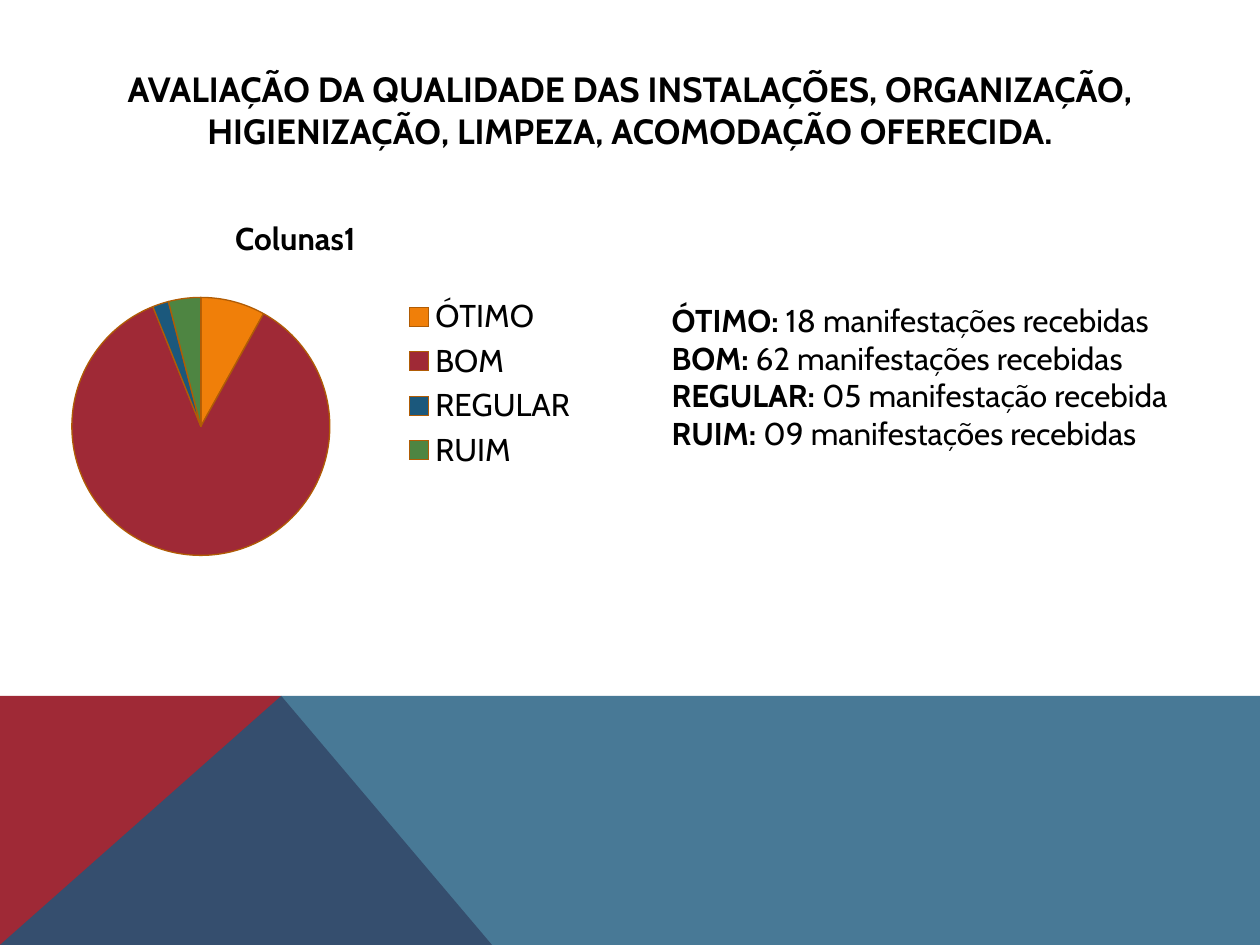
import dataclasses

import lxml.etree
import pptx
import pptx.chart.data
import pptx.dml.color
import pptx.enum.chart
import pptx.enum.text
import pptx.oxml
import pptx.oxml.ns
import pptx.util

Cm = pptx.util.Cm
qn = pptx.oxml.ns.qn


@dataclasses.dataclass(frozen=True)
class Theme:
    font: str = "Cabin"
    text: str = "000000"
    red: str = "9F2936"
    blue: str = "1B587C"
    slices: tuple = ("F07F09", "9F2936", "1B587C", "4E8542")
    slice_edge: str = "B05C05"
    heading_size: int = 20
    body_size: int = 18


def rgb(value):
    return pptx.dml.color.RGBColor.from_string(value)


class SlideBuilder:
    def __init__(self, page, theme):
        self.page = page
        self.theme = theme

    def style_font(self, font, size, bold=False):
        font.name = self.theme.font
        font.size = pptx.util.Pt(size)
        font.bold = bold
        font.color.rgb = rgb(self.theme.text)

    def polygon(self, points, color, opacity=100):
        start, *rest = [(Cm(x), Cm(y)) for x, y in points]
        builder = self.page.shapes.build_freeform(*start)
        builder.add_line_segments(rest, close=True)
        shape = builder.convert_to_shape()
        shape.shadow.inherit = False
        shape.line.fill.background()
        shape.fill.solid()
        shape.fill.fore_color.rgb = rgb(color)
        if opacity < 100:
            color_node = shape.fill._xPr.find(qn("a:solidFill"))[0]
            alpha = lxml.etree.SubElement(color_node, qn("a:alpha"))
            alpha.set("val", str(opacity * 1000))

    def text_box(self, area, lines, size, align, anchor):
        box = self.page.shapes.add_textbox(*map(Cm, area))
        frame = box.text_frame
        frame.word_wrap = True
        frame.vertical_anchor = anchor
        for index, spans in enumerate(lines):
            para = frame.add_paragraph() if index else frame.paragraphs[0]
            para.alignment = align
            for text, bold in spans:
                span = para.add_run()
                span.text = text
                self.style_font(span.font, size, bold)

    def pie(self, area, title, values, plot_area):
        data = pptx.chart.data.CategoryChartData()
        data.categories = list(values)
        data.add_series(title, list(values.values()))
        chart = self.page.shapes.add_chart(
            pptx.enum.chart.XL_CHART_TYPE.PIE, *map(Cm, area), data
        ).chart
        self.style_font(chart.font, self.theme.body_size)

        chart.has_title = True
        heading = chart.chart_title.text_frame
        heading.text = title
        self.style_font(heading.paragraphs[0].runs[0].font, self.theme.body_size, True)

        chart.has_legend = True
        chart.legend.position = pptx.enum.chart.XL_LEGEND_POSITION.RIGHT
        chart.legend.include_in_layout = True
        self.style_font(chart.legend.font, self.theme.body_size)

        plot = chart.plots[0]
        plot.vary_by_categories = True
        for index, color in enumerate(self.theme.slices):
            look = plot.series[0].points[index].format
            look.fill.solid()
            look.fill.fore_color.rgb = rgb(color)
            look.line.color.rgb = rgb(self.theme.slice_edge)
            look.line.width = pptx.util.Pt(0.75)
        self.place_plot(chart, plot_area)

    def place_plot(self, chart, fractions):
        plot_node = chart._chartSpace.chart.plotArea
        for old in plot_node.findall(qn("c:layout")):
            plot_node.remove(old)
        layout = pptx.oxml.parse_xml(
            f'<c:layout xmlns:c="{pptx.oxml.ns.nsuri("c")}"><c:manualLayout/></c:layout>'
        )
        settings = [("layoutTarget", "inner"), ("xMode", "edge"), ("yMode", "edge")]
        settings += zip("xywh", fractions)
        for name, value in settings:
            lxml.etree.SubElement(layout[0], qn(f"c:{name}")).set("val", str(value))
        plot_node.insert(0, layout)


def main():
    theme = Theme()
    deck = pptx.Presentation()
    deck.slide_width, deck.slide_height = Cm(25.4), Cm(19.05)
    slide = SlideBuilder(deck.slides.add_slide(deck.slide_layouts[6]), theme)
    align = pptx.enum.text.PP_ALIGN
    anchor = pptx.enum.text.MSO_ANCHOR

    right, bottom, band_top, peak = 25.4, 19.05, 14.03, 5.67
    slide.polygon(
        [(0, bottom), (0, band_top), (peak, band_top), (9.92, bottom)], theme.red
    )
    slide.polygon(
        [(0, bottom), (peak, band_top), (right, band_top), (right, bottom)],
        theme.blue,
        opacity=80,
    )

    heading = (
        "AVALIAÇÃO DA QUALIDADE DAS INSTALAÇÕES, ORGANIZAÇÃO, "
        "HIGIENIZAÇÃO, LIMPEZA, ACOMODAÇÃO OFERECIDA."
    )
    slide.text_box(
        (1.2, 1.02, 23, 2.36), [[(heading, True)]],
        theme.heading_size, align.CENTER, anchor.MIDDLE,
    )

    counts = {
        "ÓTIMO": "18 manifestações recebidas",
        "BOM": "62 manifestações recebidas",
        "REGULAR": "05 manifestação recebida",
        "RUIM": "09 manifestações recebidas",
    }
    lines = [[(f"{grade}: ", True), (count, False)] for grade, count in counts.items()]
    slide.text_box(
        (13.29, 5.94, 11.13, 3.33), lines, theme.body_size, align.LEFT, anchor.TOP
    )

    slide.pie(
        (0, 3.96, 11.91, 7.54),
        "Colunas1",
        dict(zip(counts, (8, 85, 2, 4))),
        (0.12, 0.27, 0.44, 0.69),
    )
    deck.save("out.pptx")


if __name__ == "__main__":
    main()
